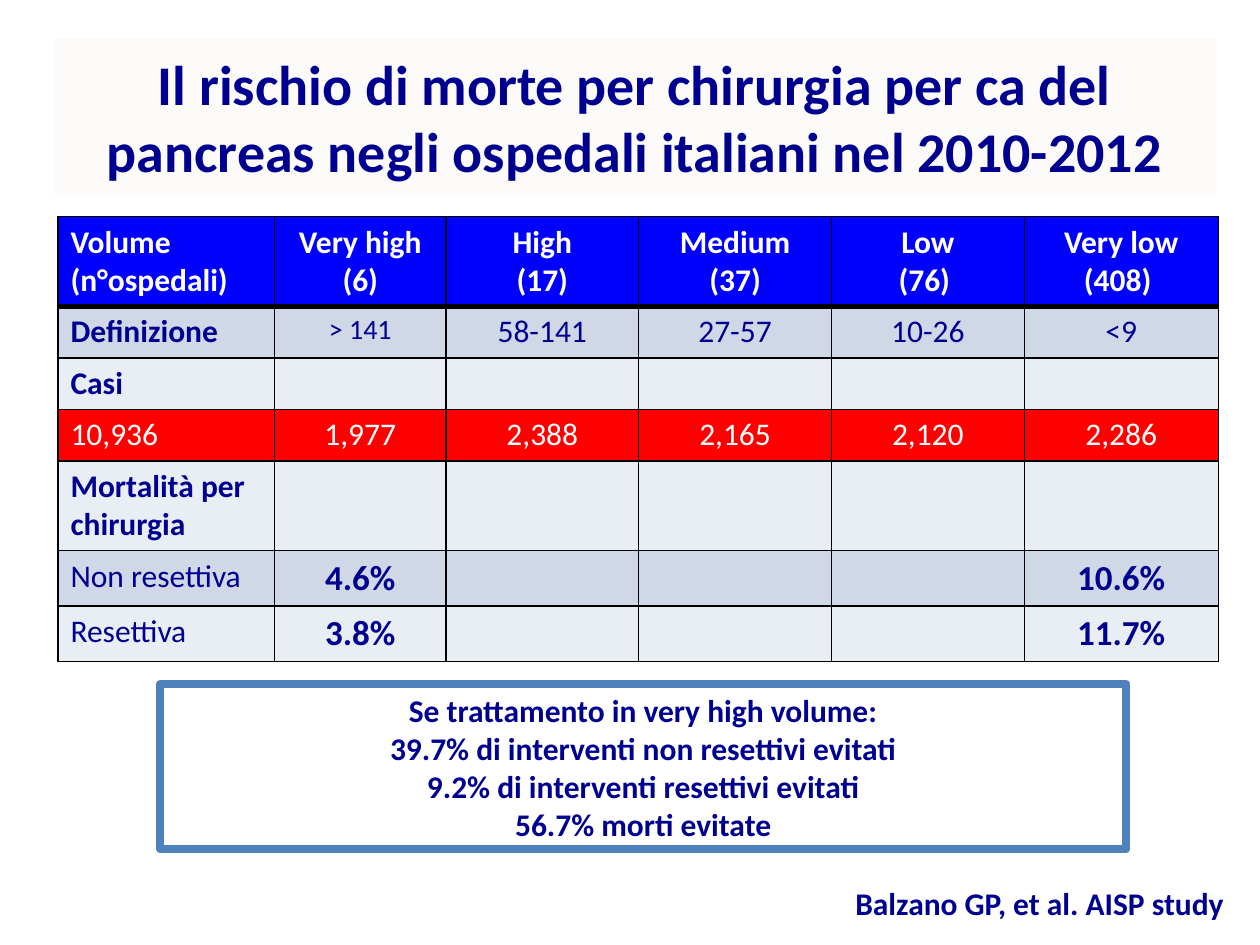
from dataclasses import dataclass

from lxml import etree
from pptx import Presentation
from pptx.dml.color import RGBColor
from pptx.enum.shapes import MSO_SHAPE
from pptx.enum.text import MSO_ANCHOR, PP_ALIGN
from pptx.oxml.ns import qn
from pptx.util import Inches, Pt

RECTANGLE = MSO_SHAPE.RECTANGLE
LEFT, CENTER = PP_ALIGN.LEFT, PP_ALIGN.CENTER
TOP, MIDDLE = MSO_ANCHOR.TOP, MSO_ANCHOR.MIDDLE


@dataclass(frozen=True)
class Theme:
    font: str = "Calibri"
    navy: str = "000090"
    white: str = "FFFFFF"
    black: str = "000000"
    header: str = "0000FF"
    highlight: str = "FF0000"
    band_dark: str = "D0D8E8"
    band_light: str = "E9EDF4"
    title_fill: str = "FCFBF9"
    frame: str = "4F81BD"
    title_size: int = 32
    body_size: int = 18
    small_size: int = 16
    result_size: int = 20


THEME = Theme()


@dataclass(frozen=True)
class Row:
    """One table row; sizes and weights apply to the label or to the values."""
    label: str
    values: tuple[str, ...]
    height: float
    fill: str
    color: str = THEME.navy
    label_bold: bool = True
    value_bold: bool = False
    value_size: int = THEME.body_size


COLUMN_WIDTHS = (1.72, 1.36, 1.53, 1.53, 1.53, 1.54)
BLANK = ("",) * 5
ROWS = (
    Row("Volume\n(n°ospedali)",
        ("Very high\n(6)", "High\n(17)", "Medium\n(37)", "Low\n(76) ", "Very low\n(408) "),
        0.7, THEME.header, THEME.white, value_bold=True),
    Row("Definizione", ("> 141", "58-141", "27-57", "10-26", "<9"), 0.41, THEME.band_dark),
    Row("Casi", BLANK, 0.41, THEME.band_light),
    Row("10,936", ("1,977", "2,388", "2,165", "2,120", "2,286"),
        0.41, THEME.highlight, THEME.white, label_bold=False),
    Row("Mortalità per  chirurgia", BLANK, 0.7, THEME.band_light),
    Row("Non resettiva", ("4.6%", "", "", "", "10.6%"), 0.43, THEME.band_dark,
        label_bold=False, value_bold=True, value_size=THEME.result_size),
    Row("Resettiva", ("3.8%", "", "", "", "11.7%"), 0.43, THEME.band_light,
        label_bold=False, value_bold=True, value_size=THEME.result_size),
)


def write_text(frame, text: str, *, size: int = THEME.body_size, color: str = THEME.navy,
               bold: bool = True, align=CENTER) -> None:
    """Write each line of the text as a paragraph."""
    for index, line in enumerate(text.split("\n")):
        para = frame.paragraphs[0] if index == 0 else frame.add_paragraph()
        para.alignment = align
        para.font.size = Pt(size)
        if not line:
            continue
        span = para.add_run()
        span.text = line
        span.font.name = THEME.font
        span.font.size = Pt(size)
        span.font.bold = bold
        span.font.color.rgb = RGBColor.from_string(color)


def add_panel(page, left: float, top: float, width: float, height: float, text: str, *,
              size: int, fill: str | None = None, line: str | None = None) -> None:
    box = page.shapes.add_shape(RECTANGLE, Inches(left), Inches(top),
                                Inches(width), Inches(height))
    box.shadow.inherit = False
    if fill:
        box.fill.solid()
        box.fill.fore_color.rgb = RGBColor.from_string(fill)
    else:
        box.fill.background()
    if line:
        box.line.color.rgb = RGBColor.from_string(line)
        box.line.width = Pt(4.5)
    else:
        box.line.fill.background()
    box.text_frame.word_wrap = True
    box.text_frame.vertical_anchor = MIDDLE
    write_text(box.text_frame, text, size=size)


def set_borders(cell, top: float = 1, bottom: float = 1) -> None:
    """Draw the four cell edges; widths are in points."""
    properties = cell._tc.get_or_add_tcPr()
    widths = {"a:lnL": 1, "a:lnR": 1, "a:lnT": top, "a:lnB": bottom}
    for index, (tag, width) in enumerate(widths.items()):
        edge = etree.Element(qn(tag), w=str(Pt(width)))
        solid = etree.SubElement(edge, qn("a:solidFill"))
        etree.SubElement(solid, qn("a:srgbClr"), val=THEME.black)
        properties.insert(index, edge)


def add_volume_table(page, left: float, top: float) -> None:
    table = page.shapes.add_table(
        len(ROWS), len(COLUMN_WIDTHS), Inches(left), Inches(top),
        Inches(sum(COLUMN_WIDTHS)), Inches(sum(row.height for row in ROWS))).table
    for column, width in zip(table.columns, COLUMN_WIDTHS):
        column.width = Inches(width)
    for row_index, row in enumerate(ROWS):
        table.rows[row_index].height = Inches(row.height)
        for column_index, text in enumerate((row.label, *row.values)):
            cell = table.cell(row_index, column_index)
            cell.fill.solid()
            cell.fill.fore_color.rgb = RGBColor.from_string(row.fill)
            cell.vertical_anchor = TOP
            # A heavy rule separates the header from the body
            set_borders(cell, top=3 if row_index == 1 else 1,
                        bottom=3 if row_index == 0 else 1)
            is_label = column_index == 0
            size = THEME.body_size if is_label or not text else row.value_size
            if text.startswith(">"):
                size = THEME.small_size
            write_text(cell.text_frame, text, size=size, color=row.color,
                       bold=row.label_bold if is_label else row.value_bold,
                       align=LEFT if is_label else CENTER)


def main() -> None:
    deck = Presentation()
    deck.slide_width, deck.slide_height = Inches(10), Inches(7.5)
    page = deck.slides.add_slide(deck.slide_layouts[6])

    # Title
    add_panel(page, 0.43, 0.3, 9.22, 1.25,
              "Il rischio di morte per chirurgia per ca del pancreas "
              "negli ospedali italiani nel 2010-2012",
              size=THEME.title_size, fill=THEME.title_fill)

    # Hospital volume and mortality
    add_volume_table(page, 0.46, 1.72)

    # Conclusion
    add_panel(page, 1.27, 5.43, 7.67, 1.31,
              "Se trattamento in very high volume:\n"
              "39.7% di interventi non resettivi evitati\n"
              "9.2% di interventi resettivi evitati\n"
              "56.7% morti evitate",
              size=THEME.body_size, line=THEME.frame)

    # Citation
    citation = page.shapes.add_textbox(Inches(6.69), Inches(6.97), Inches(3.2), Inches(0.4))
    citation.text_frame.word_wrap = False
    write_text(citation.text_frame, "Balzano GP, et al. AISP study", align=LEFT)

    deck.save("out.pptx")


if __name__ == "__main__":
    main()
